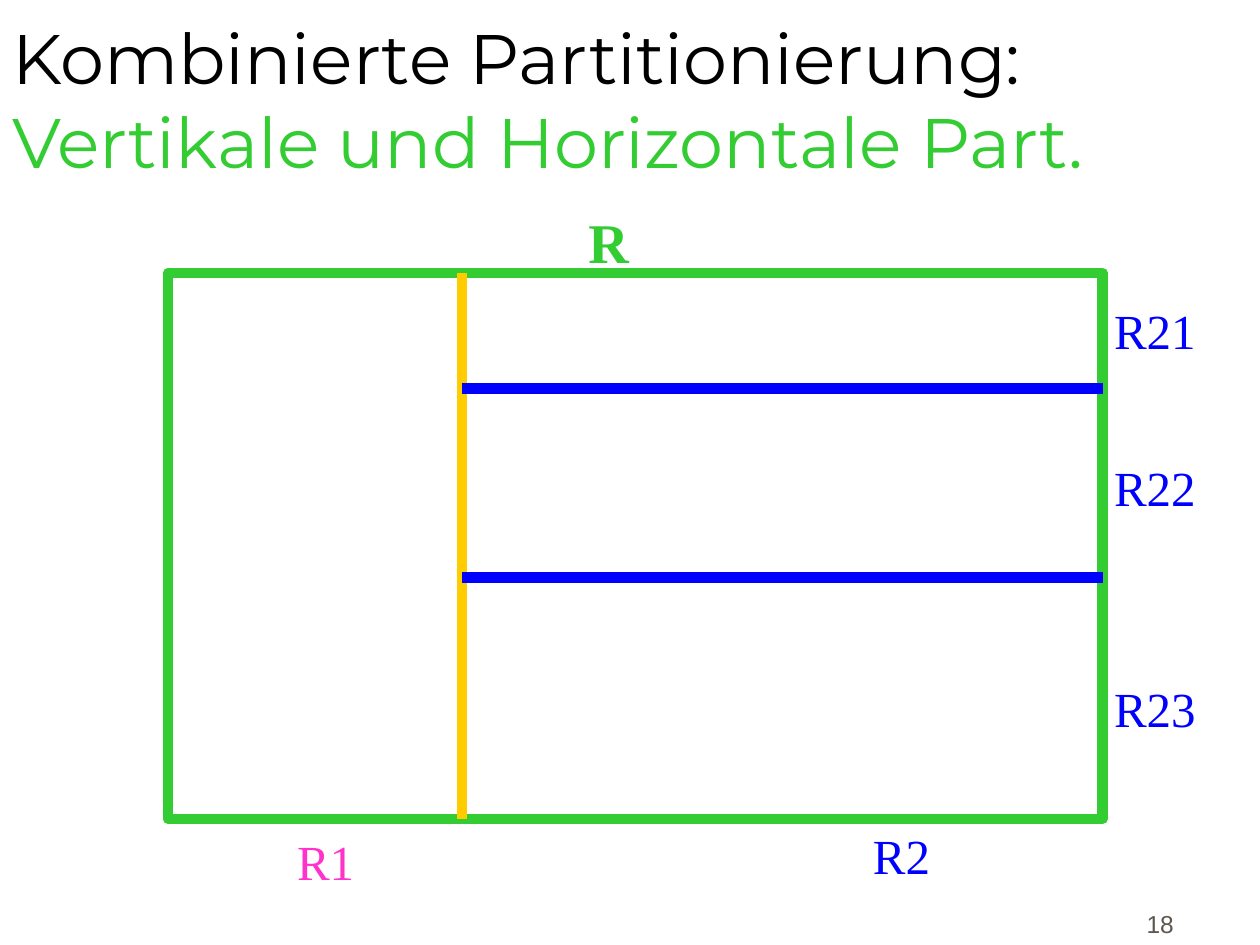
"""Build a slide on combined vertical and horizontal partitioning."""
from dataclasses import dataclass

from lxml.etree import SubElement
from pptx import Presentation
from pptx.dml.color import RGBColor
from pptx.enum.shapes import MSO_CONNECTOR, MSO_SHAPE
from pptx.enum.text import MSO_ANCHOR, MSO_AUTO_SIZE, PP_ALIGN
from pptx.oxml.ns import qn
from pptx.slide import Slide
from pptx.util import Pt

BLACK = RGBColor(0x00, 0x00, 0x00)
WHITE = RGBColor(0xFF, 0xFF, 0xFF)
GREEN = RGBColor(0x33, 0xCC, 0x33)
YELLOW = RGBColor(0xFF, 0xCC, 0x00)
BLUE = RGBColor(0x00, 0x00, 0xFF)
PINK = RGBColor(0xFF, 0x33, 0xCC)
GREY = RGBColor(0x5E, 0x57, 0x4E)

SERIF = "Times New Roman"
LEFT, TOP, RIGHT, BOTTOM = 96, 156, 630, 468
SPLIT = 264
CUTS = (222, 330)
STROKE = 6


@dataclass(frozen=True)
class Run:
    text: str
    size: float
    color: RGBColor
    font: str = SERIF
    bold: bool = False


@dataclass(frozen=True)
class Label:
    left: float
    top: float
    width: float
    height: float
    runs: tuple[Run, ...]
    align: PP_ALIGN = PP_ALIGN.CENTER
    anchor: MSO_ANCHOR = MSO_ANCHOR.MIDDLE
    wrap: bool = False


@dataclass(frozen=True)
class Line:
    x1: float
    y1: float
    x2: float
    y2: float
    color: RGBColor


def part(name: str, left: float, top: float, width: float, color: RGBColor) -> Label:
    return Label(left, top, width, 41, (Run(name, 28, color),))


TITLE = Label(0, 18, 720, 90, (
    Run("Kombinierte Partitionierung:", 40, BLACK, "Montserrat"),
    Run(" ", 36, BLACK, "Montserrat"),
    Run("Vertikale und Horizontale Part.", 40, GREEN, "Montserrat"),
), PP_ALIGN.LEFT, MSO_ANCHOR.BOTTOM, True)
NUMBER = Label(609.84, 504, 68.04, 36, (Run("18", 14, GREY, "Arial"),),
               PP_ALIGN.RIGHT, MSO_ANCHOR.BOTTOM, True)
LABELS = (
    NUMBER,
    TITLE,
    Label(329, 115.2, 37.5, 45.4, (Run("R", 32, GREEN, bold=True),)),
    part("R1", 162.72, 471.6, 46.8, PINK),
    part("R2", 491.76, 468, 46.8, BLUE),
    *(part(f"R2{i}", 629.28, top, 61.2, BLUE)
      for i, top in enumerate((168, 258, 384), 1)),
)
LINES = (
    Line(SPLIT, TOP, SPLIT, BOTTOM, YELLOW),
    *(Line(SPLIT, y, RIGHT, y, BLUE) for y in CUTS),
)


def write(slide: Slide, label: Label) -> None:
    box = slide.shapes.add_textbox(
        Pt(label.left), Pt(label.top), Pt(label.width), Pt(label.height))
    frame = box.text_frame
    frame.word_wrap = label.wrap
    frame.vertical_anchor = label.anchor
    if not label.wrap:
        frame.auto_size = MSO_AUTO_SIZE.SHAPE_TO_FIT_TEXT
    para = frame.paragraphs[0]
    para.alignment = label.align
    for item in label.runs:
        run = para.add_run()
        run.text = item.text
        font = run.font
        font.name = item.font
        font.size = Pt(item.size)
        font.bold = item.bold
        font.color.rgb = item.color


def frame(slide: Slide) -> None:
    box = slide.shapes.add_shape(
        MSO_SHAPE.RECTANGLE, Pt(LEFT), Pt(TOP), Pt(RIGHT - LEFT), Pt(BOTTOM - TOP))
    box.shadow.inherit = False
    box.fill.solid()
    box.fill.fore_color.rgb = WHITE
    box.line.color.rgb = GREEN
    box.line.width = Pt(STROKE)


def rule(slide: Slide, line: Line) -> None:
    link = slide.shapes.add_connector(
        MSO_CONNECTOR.STRAIGHT, Pt(line.x1), Pt(line.y1), Pt(line.x2), Pt(line.y2))
    link.line.color.rgb = line.color
    link.line.width = Pt(STROKE)
    SubElement(link._element.spPr, qn("a:effectLst"))


def main() -> None:
    deck = Presentation()
    deck.slide_width, deck.slide_height = Pt(720), Pt(540)
    slide = deck.slides.add_slide(deck.slide_layouts[6])
    frame(slide)
    for line in LINES:
        rule(slide, line)
    for label in LABELS:
        write(slide, label)
    deck.save("out.pptx")


if __name__ == "__main__":
    main()
